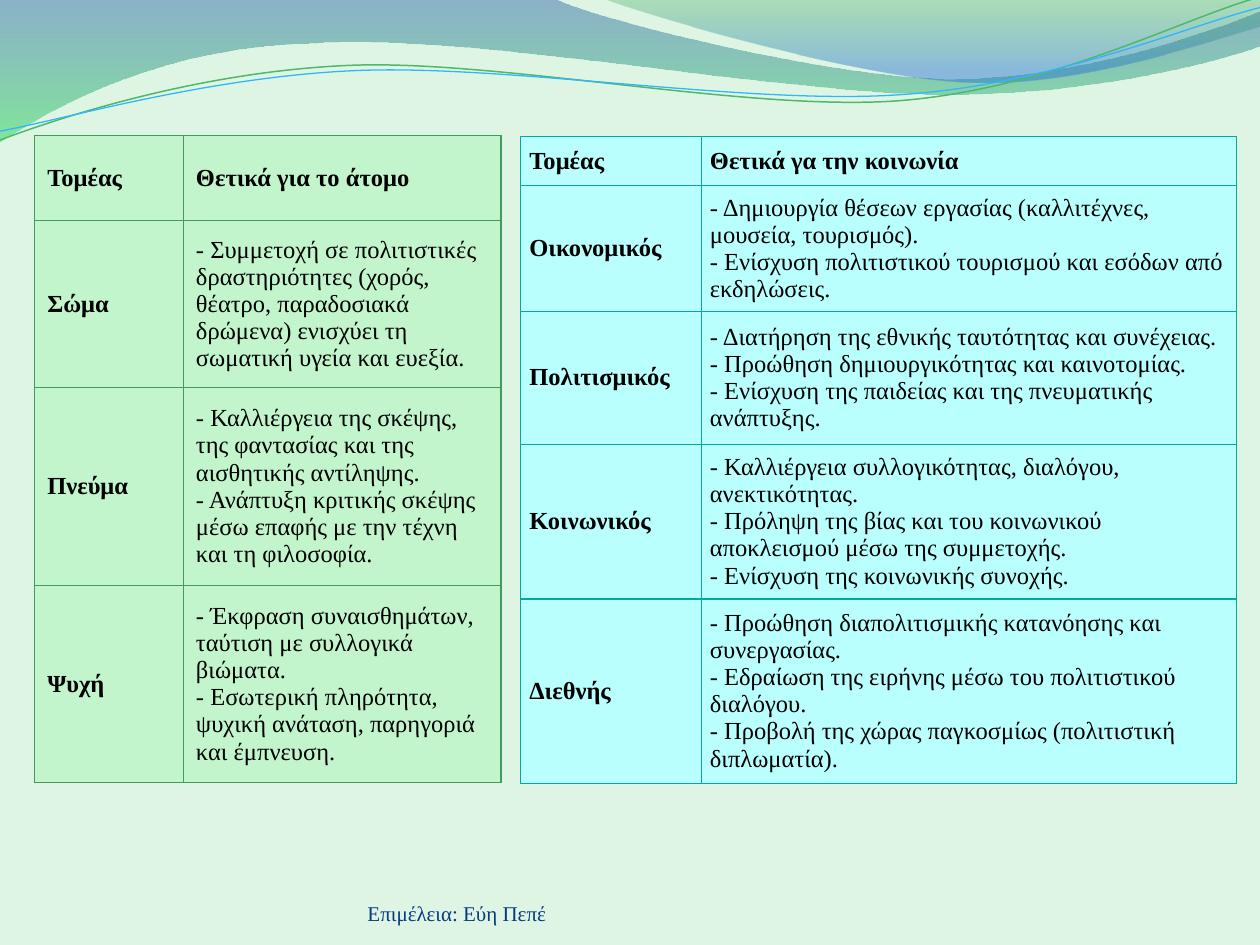
from copy import deepcopy

from lxml.etree import SubElement
from pptx import Presentation
from pptx.dml.color import RGBColor
from pptx.enum.text import MSO_ANCHOR as Anchor
from pptx.oxml.ns import qn
from pptx.util import Pt

FONT = "Times New Roman"

# Each outline is a start point, then (x, y) lines and (x1, y1, x2, y2, x, y) curves.
BROAD_WAVE = [
    (0, 0), (317, -0.7),
    (343, 12, 478, 45, 546, 45), (614, 45, 690, 19, 720, 6.5),
    (721, 26),
    (708, 32, 626, 55, 537, 54), (448, 54, 275, 20, 185, 24.5),
    (93, 26, 33, 60, -0.7, 81.4),
]
RIGHT_WAVE = [
    (345, -0.7),
    (366.5, 8, 491, 44.6, 553.7, 46.8), (616, 49.7, 692, 23, 720, 15),
    (720, 0),
]
GREEN_LINE = [
    (0, 80),
    (34.6, 67, 113.8, 41, 199.4, 37.4), (284.4, 33.8, 427, 64, 513.4, 57.6),
    (599.8, 51, 675.4, 10.8, 718.6, -1.4),
]
BLUE_LINE = [
    (0, 74.9),
    (33.8, 69, 118, 43.9, 203.8, 40.3), (290, 36.7, 430, 60.5, 516, 54),
    (602, 48.2, 677.5, 15, 720, 4.3),
]

PERSON_ROWS = [
    ("Τομέας", "Θετικά για το άτομο"),
    ("Σώμα", "- Συμμετοχή σε πολιτιστικές δραστηριότητες (χορός, θέατρο, "
             "παραδοσιακά δρώμενα) ενισχύει τη σωματική υγεία και ευεξία."),
    ("Πνεύμα", "- Καλλιέργεια της σκέψης, της φαντασίας και της αισθητικής αντίληψης.\n"
               "- Ανάπτυξη κριτικής σκέψης μέσω επαφής με την τέχνη και τη φιλοσοφία."),
    ("Ψυχή", "- Έκφραση συναισθημάτων, ταύτιση με συλλογικά βιώματα.\n"
             "- Εσωτερική πληρότητα, ψυχική ανάταση, παρηγοριά και έμπνευση."),
]
SOCIETY_ROWS = [
    ("Τομέας", "Θετικά γα την κοινωνία"),
    ("Οικονομικός", "- Δημιουργία θέσεων εργασίας (καλλιτέχνες, μουσεία, τουρισμός).\n"
                    "- Ενίσχυση πολιτιστικού τουρισμού και εσόδων από εκδηλώσεις."),
    ("Πολιτισμικός", "- Διατήρηση της εθνικής ταυτότητας και συνέχειας.\n"
                     "- Προώθηση δημιουργικότητας και καινοτομίας.\n"
                     "- Ενίσχυση της παιδείας και της πνευματικής ανάπτυξης."),
    ("Κοινωνικός", "- Καλλιέργεια συλλογικότητας, διαλόγου, ανεκτικότητας.\n"
                   "- Πρόληψη της βίας και του κοινωνικού αποκλεισμού μέσω της συμμετοχής.\n"
                   "- Ενίσχυση της κοινωνικής συνοχής."),
    ("Διεθνής", "- Προώθηση διαπολιτισμικής κατανόησης και συνεργασίας.\n"
                "- Εδραίωση της ειρήνης μέσω του πολιτιστικού διαλόγου.\n"
                "- Προβολή της χώρας παγκοσμίως (πολιτιστική διπλωματία)."),
]


def color(hex_text):
    return RGBColor.from_string(hex_text)


def set_values(target, values):
    for name, value in values.items():
        setattr(target, name, value)


def write_text(para, text, size, hex_text, bold=False):
    """Fill a paragraph, giving its line breaks the format of its runs."""
    para.text = text
    for span in para.runs:
        set_values(span.font, {"name": FONT, "size": Pt(size), "bold": bold})
        span.font.color.rgb = color(hex_text)
    for line_break in para._p.findall(qn("a:br")):
        line_break.append(deepcopy(para.runs[0]._r.rPr))


def bend_segments(shape, outline):
    """Join each three line segments that stand for a curve into a Bézier segment."""
    segments = iter(list(shape._element.iter(qn("a:lnTo"))))
    for part in outline[1:]:
        group = [next(segments) for _ in range(len(part) // 2)]
        if len(group) == 3:
            group[0].tag = qn("a:cubicBezTo")
            for segment in group[1:]:
                group[0].append(segment[0])
                segment.getparent().remove(segment)


def add_outline(page, box, outline, close):
    left, top = box[:2]
    points = [(Pt(left + x), Pt(top + y))
              for part in outline for x, y in zip(part[::2], part[1::2])]
    builder = page.shapes.build_freeform(*points[0])
    builder.add_line_segments(points[1:], close=close)
    shape = builder.convert_to_shape()
    shape.shadow.inherit = False
    bend_segments(shape, outline)
    return shape


def add_wave(page, box, outline, stops):
    """Stops are (position, colour, opacity in percent), from top to bottom."""
    shape = add_outline(page, box, outline, True)
    shape.line.fill.background()
    shape.fill.gradient()
    shape.fill.gradient_angle = 270
    for stop, (position, hex_text, opacity) in zip(shape.fill.gradient_stops, stops):
        stop.position = position
        stop.color.rgb = color(hex_text)
        rgb = stop._gs.find(qn("a:srgbClr"))
        SubElement(rgb, qn("a:alpha"), val=str(opacity * 1000))


def add_wave_line(page, box, outline, hex_text, width):
    shape = add_outline(page, box, outline, False)
    shape.fill.background()
    shape.line.color.rgb = color(hex_text)
    shape.line.width = Pt(width)


def add_header_waves(page, box):
    add_wave(page, box, BROAD_WAVE, [(0, "2960A7", 45), (1, "35DA5E", 55)])
    add_wave(page, box, RIGHT_WAVE, [(0, "36A752", 30), (0.8, "2472D3", 45)])
    add_wave_line(page, box, GREEN_LINE, "50B86A", 0.85)
    add_wave_line(page, box, BLUE_LINE, "31B6FD", 0.75)


def add_cell_borders(cell, hex_text, width):
    properties = cell._tc.get_or_add_tcPr()
    for side in ("lnL", "lnR", "lnT", "lnB"):
        line = SubElement(properties, qn(f"a:{side}"), w=str(Pt(width)))
        SubElement(SubElement(line, qn("a:solidFill")), qn("a:srgbClr"), val=hex_text)


def add_benefits_table(page, box, rows, widths, heights, fill, border, insets):
    frame = page.shapes.add_table(len(rows), len(widths), *map(Pt, box))
    table = frame.table
    set_values(table, {"first_row": False, "horz_banding": False})
    for column, width in zip(table.columns, widths):
        column.width = Pt(width)
    side, end = map(Pt, insets)
    cell_format = {"vertical_anchor": Anchor.MIDDLE, "margin_left": side,
                   "margin_right": side, "margin_top": end, "margin_bottom": end}
    for i, (row, height) in enumerate(zip(rows, heights)):
        table.rows[i].height = Pt(height)
        for j, text in enumerate(row):
            cell = table.cell(i, j)
            set_values(cell, cell_format)
            add_cell_borders(cell, border, 0.75)
            cell.fill.solid()
            cell.fill.fore_color.rgb = color(fill)
            write_text(cell.text_frame.paragraphs[0], text, 14, "000000",
                       bold=i == 0 or j == 0)
    frame.height = Pt(box[3])


def add_footer(page, box, text):
    frame = page.shapes.add_textbox(*map(Pt, box)).text_frame
    set_values(frame, {"word_wrap": True, "vertical_anchor": Anchor.BOTTOM,
                       "margin_left": 0, "margin_right": 0,
                       "margin_top": 0, "margin_bottom": 0})
    write_text(frame.paragraphs[0], text, 12, "073B81")


def main():
    deck = Presentation()
    set_values(deck, {"slide_width": Pt(720), "slide_height": Pt(540)})
    page = deck.slides.add_slide(deck.slide_layouts[6])
    page.background.fill.solid()
    page.background.fill.fore_color.rgb = color("DEF5E4")

    add_header_waves(page, (0, 0, 720, 82))
    add_footer(page, (210, 500, 264, 29), "Επιμέλεια: Εύη Πεπέ")
    add_benefits_table(page, (19.8, 77.4, 266.5, 370), PERSON_ROWS, (85, 181.5),
                       (48.5, 95.5, 113, 113), "C2F5CC", "429B58", (7.2, 3.6))
    add_benefits_table(page, (297.5, 78.2, 409, 370), SOCIETY_ROWS, (103.2, 305.8),
                       (28, 66.8, 76, 82, 97.8), "B9FFFE", "01A8A4", (5, 2.2))
    deck.save("out.pptx")


if __name__ == "__main__":
    main()
